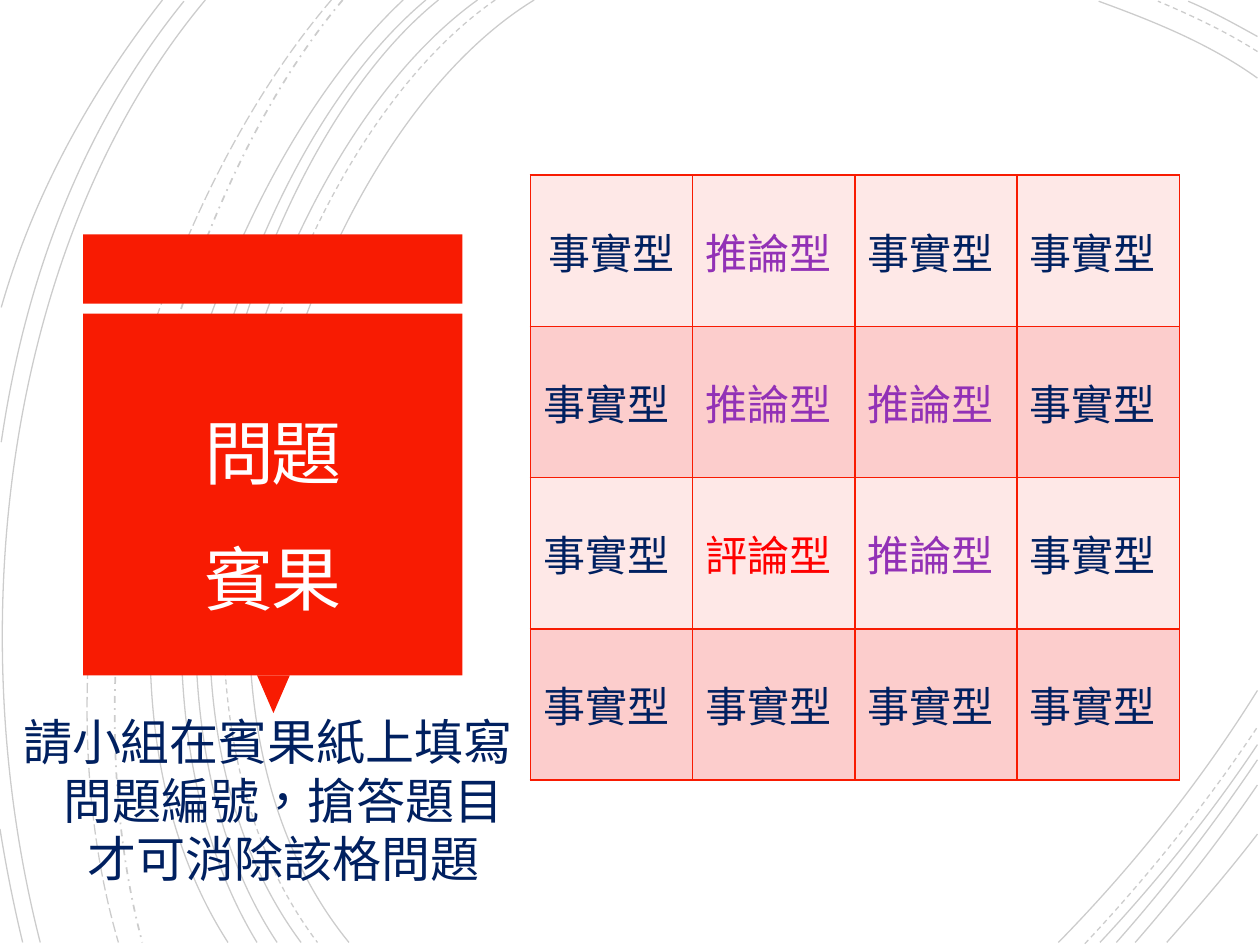
from lxml.etree import SubElement
from pptx import Presentation
from pptx.dml.color import RGBColor
from pptx.enum.dml import MSO_LINE
from pptx.enum.shapes import MSO_SHAPE
from pptx.enum.text import MSO_ANCHOR, PP_ALIGN
from pptx.oxml.ns import qn
from pptx.util import Inches, Pt

RED = RGBColor(0xF8, 0x1B, 0x02)
BRIGHT_RED = RGBColor(0xFF, 0x00, 0x00)
PURPLE = RGBColor(0x92, 0x31, 0xB6)
NAVY = RGBColor(0x00, 0x20, 0x60)
OFF_WHITE = RGBColor(0xFF, 0xFE, 0xFF)
BLACK = RGBColor(0x00, 0x00, 0x00)
PALE_PINK = RGBColor(0xFE, 0xE8, 0xE7)
PINK = RGBColor(0xFC, 0xCD, 0xCC)

FONT = "Noto Sans CJK JP"
GRID_COLUMNS, GRID_ROWS = 1000, 750
UNIT = Inches(10) // GRID_COLUMNS

FACT, INFER, COMMENT = "事實型", "推論型", "評論型"
KIND_COLORS = {FACT: NAVY, INFER: PURPLE, COMMENT: BRIGHT_RED}
BINGO = [
    [FACT, INFER, FACT, FACT],
    [FACT, INFER, INFER, FACT],
    [FACT, COMMENT, INFER, FACT],
    [FACT, FACT, FACT, FACT],
]

SOLID, DASH = MSO_LINE.SOLID, MSO_LINE.DASH
ARCS = [
    (SOLID, [(424, 0), (236, 115), (107, 540), (277, 748)]),
    (SOLID, [(998, 62), (959, 34), (913, 16), (872, 1)]),
    (SOLID, [(840, 748), (897, 690), (952, 622), (998, 548)]),
    (DASH, [(393, 0), (213, 125), (92, 537), (252, 748)]),
    (DASH, [(998, 41), (973, 25), (945, 12), (919, 1)]),
    (DASH, [(861, 749), (909, 698), (956, 640), (998, 577)]),
    (SOLID, [(379, 0), (202, 127), (82, 537), (239, 748)]),
    (SOLID, [(998, 29), (980, 19), (962, 9), (943, 1)]),
    (SOLID, [(873, 748), (917, 701), (960, 648), (998, 591)]),
    (SOLID, [(348, 0), (183, 133), (82, 541), (220, 748)]),
    (SOLID, [(886, 748), (925, 704), (963, 655), (998, 603)]),
    (SOLID, [(338, 0), (173, 138), (73, 533), (204, 748)]),
    (SOLID, [(901, 748), (935, 709), (968, 667), (998, 623)]),
    (SOLID, [(320, 0), (163, 147), (40, 529), (181, 748)]),
    (SOLID, [(926, 748), (950, 721), (975, 692), (998, 662)]),
    (MSO_LINE.DASH_DOT, [(272, 0), (132, 166), (49, 509), (113, 748)]),
    (MSO_LINE.LONG_DASH, [(263, 0), (118, 169), (21, 499), (94, 748)]),
    (SOLID, [(163, 0), (8, 185), (-34, 490), (32, 748)]),
    (SOLID, [(146, 1), (69, 96), (21, 214), (1, 351)]),
    (SOLID, [(0, 658), (5, 689), (11, 719), (18, 748)]),
    (SOLID, [(129, 0), (75, 69), (28, 150), (1, 244)]),
]


def grid(*counts):
    """Turn counts of grid columns or rows into lengths."""
    return [count * UNIT for count in counts]


def add_arc(page, dash, controls):
    """Draw one faint cubic background arc from its control points."""
    start, *others = [grid(*point) for point in controls]
    builder = page.shapes.build_freeform(*start)
    builder.add_line_segments(others, close=False)
    arc = builder.convert_to_shape()
    segments = list(arc._element.iter(qn("a:lnTo")))
    curve = SubElement(segments[0].getparent(), qn("a:cubicBezTo"))
    for segment in segments:
        curve.append(segment[0])
        segment.getparent().remove(segment)
    arc.shadow.inherit = False
    arc.fill.background()
    arc.line.color.rgb = BLACK
    arc.line.width = Pt(1 if dash == MSO_LINE.DASH_DOT else 0.75)
    arc.line.dash_style = dash
    color = arc.line._ln.find(qn("a:solidFill"))[0]
    SubElement(color, qn("a:alpha"), val="20000")


def add_block(page, kind, place, rotation=0):
    """Add a plain red shape."""
    block = page.shapes.add_shape(kind, *grid(*place))
    block.shadow.inherit = False
    block.fill.solid()
    block.fill.fore_color.rgb = RED
    block.line.fill.background()
    block.rotation = rotation


def write(para, text, size=24, color=NAVY, align=None, spacing=0):
    """Fill a paragraph with formatted text, one line per text line."""
    para.alignment = align
    para.text = text.replace("\n", "\v")
    for span in para.runs:
        span.font.size = Pt(size)
        span.font.color.rgb = color
        span.font.name = FONT
        marks = span.font._element
        marks.set("lang", "zh-TW")
        SubElement(marks, qn("a:ea"), typeface=FONT)
        if spacing:
            marks.set("spc", str(round(spacing * 100)))


def add_text(page, place, text, inset=None, **style):
    """Add a wrapped, vertically centred text box and return its paragraph."""
    frame = page.shapes.add_textbox(*grid(*place)).text_frame
    frame.word_wrap = True
    frame.vertical_anchor = MSO_ANCHOR.MIDDLE
    if inset is not None:
        frame.margin_left = frame.margin_right = inset * UNIT
        frame.margin_top = frame.margin_bottom = inset * UNIT
    para = frame.paragraphs[0]
    write(para, text, **style)
    return para


def add_borders(cell):
    """Give a table cell thin red borders on every side."""
    properties = cell._tc.get_or_add_tcPr()
    for side in ("lnL", "lnR", "lnT", "lnB"):
        border = SubElement(properties, qn(f"a:{side}"), w=str(Pt(1)))
        fill = SubElement(border, qn("a:solidFill"))
        SubElement(fill, qn("a:srgbClr"), val=str(RED))


def add_bingo(page, place):
    """Add the bingo table of question kinds."""
    table = page.shapes.add_table(len(BINGO), len(BINGO[0]), *grid(*place)).table
    for row, kinds in enumerate(BINGO):
        for column, kind in enumerate(kinds):
            cell = table.cell(row, column)
            add_borders(cell)
            cell.fill.solid()
            cell.fill.fore_color.rgb = PINK if row % 2 else PALE_PINK
            cell.vertical_anchor = MSO_ANCHOR.MIDDLE
            align = PP_ALIGN.CENTER if row == column == 0 else None
            write(cell.text_frame.paragraphs[0], kind, color=KIND_COLORS[kind], align=align)


def main():
    """Build the question bingo slide."""
    deck = Presentation()
    deck.slide_width, deck.slide_height = grid(GRID_COLUMNS, GRID_ROWS)
    page = deck.slides.add_slide(deck.slide_layouts[6])

    for dash, controls in ARCS:
        add_arc(page, dash, controls)

    add_block(page, MSO_SHAPE.RECTANGLE, (66, 186, 301, 55))
    add_block(page, MSO_SHAPE.ISOSCELES_TRIANGLE, (204, 536, 26, 30), rotation=180)
    add_block(page, MSO_SHAPE.RECTANGLE, (66, 249, 301, 287))

    title = add_text(page, (73, 257, 287, 269), "問題\n賓果", inset=25, size=40,
                     color=OFF_WHITE, align=PP_ALIGN.CENTER, spacing=-1.5)
    title.line_spacing = 1.5
    rule = add_text(page, (4, 556, 417, 157),
                    "請小組在賓果紙上填寫問題編號，搶答題目才可消除該格問題",
                    size=28, align=PP_ALIGN.CENTER)
    rule.space_before = Pt(10)
    indent = rule._p.get_or_add_pPr()
    indent.set("marL", str(25 * UNIT))
    indent.set("indent", str(-25 * UNIT))
    add_bingo(page, (421, 139, 515, 480))
    deck.save("out.pptx")


if __name__ == "__main__":
    main()
